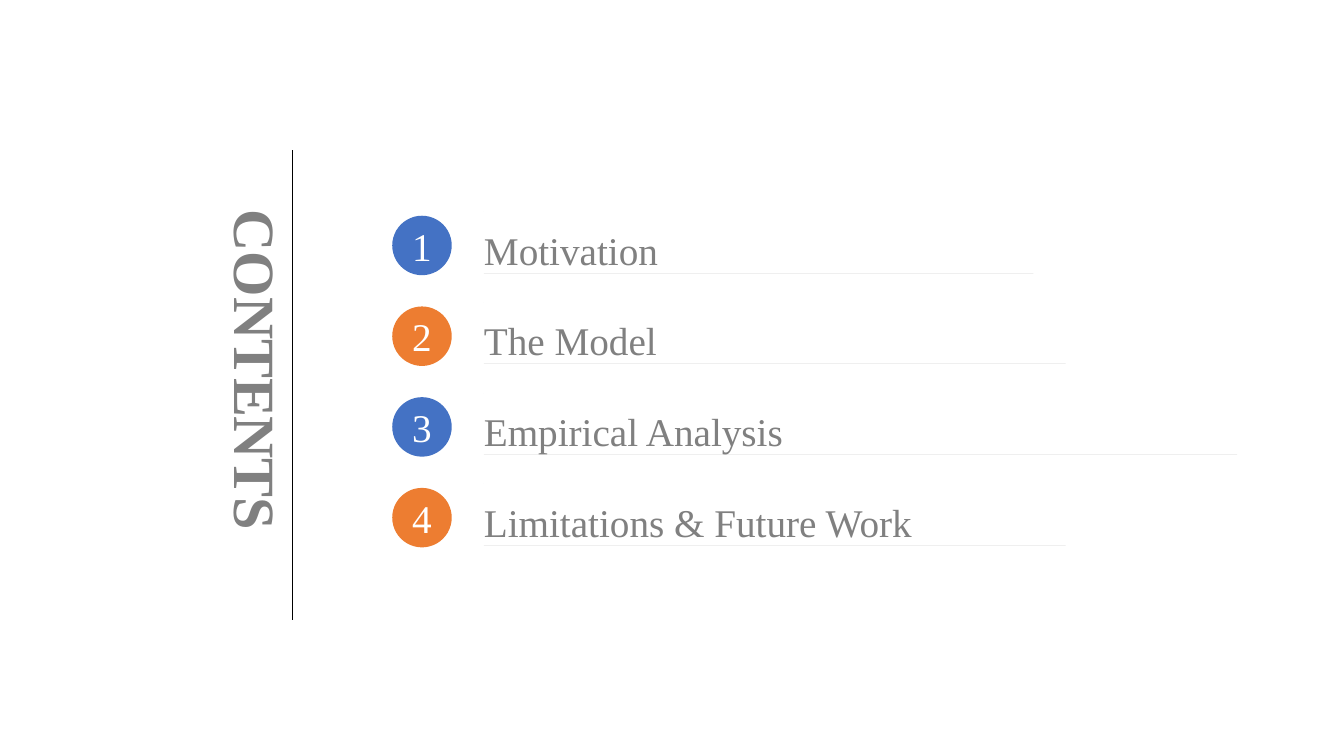
from lxml.etree import SubElement
from pptx import Presentation
from pptx.dml.color import RGBColor
from pptx.enum.shapes import MSO_CONNECTOR, MSO_SHAPE
from pptx.enum.text import MSO_ANCHOR, MSO_AUTO_SIZE, PP_ALIGN
from pptx.oxml.ns import qn
from pptx.util import Inches, Pt

GRAY, BLUE, ORANGE = "808080", "4472C4", "ED7D31"
ROW_PITCH = 0.9
# Heading and the right end of its underline
SECTIONS = [
    ("Motivation", 10.25),
    ("The Model", 10.57),
    ("Empirical Analysis", 12.27),
    ("Limitations & Future Work", 10.57),
]


def color(hex_value):
    return RGBColor.from_string(hex_value)


def write(shape, text, text_color, frame_format, paragraph_format, font_format):
    """Fill a shape with one paragraph, without insets."""
    frame = shape.text_frame
    margins = dict.fromkeys(
        ("margin_left", "margin_top", "margin_right", "margin_bottom"), 0)
    frame.text = text
    paragraph = frame.paragraphs[0]
    font = paragraph.runs[0].font
    font.color.rgb = color(text_color)
    for target, values in (
        (frame, {"word_wrap": True, **margins, **frame_format}),
        (paragraph, paragraph_format),
        (font, {"name": "Times New Roman", **font_format}),
    ):
        for name, value in values.items():
            setattr(target, name, value)


presentation = Presentation()
presentation.slide_width = Inches(13.33)
presentation.slide_height = Inches(7.5)
slide = presentation.slides.add_slide(presentation.slide_layouts[5])

title = slide.shapes.title
title.left, title.top = Inches(0.84), Inches(3.32)
title.width, title.height = Inches(3.42), Inches(0.7)
title.rotation = 90
write(title, "CONTENTS", GRAY,
      {"vertical_anchor": MSO_ANCHOR.TOP,
       "auto_size": MSO_AUTO_SIZE.SHAPE_TO_FIT_TEXT},
      {"alignment": PP_ALIGN.CENTER, "line_spacing": 1.0},
      {"size": Pt(41.7), "bold": True})

for index, (heading, line_end) in enumerate(SECTIONS):
    offset = index * ROW_PITCH
    badge_color = (BLUE, ORANGE)[index % 2]

    badge = slide.shapes.add_shape(
        MSO_SHAPE.OVAL, Inches(3.89), Inches(2.14 + offset),
        Inches(0.59), Inches(0.59))
    write(badge, str(index + 1), "FFFFFF",
          {"vertical_anchor": MSO_ANCHOR.MIDDLE},
          {"alignment": PP_ALIGN.CENTER}, {"size": Pt(28)})

    left, right = Inches(4.8), Inches(line_end)
    top, bottom = Inches(2.1 + offset), Inches(2.71 + offset)
    outline = slide.shapes.build_freeform(left, bottom)
    outline.add_line_segments([(right, bottom), (left, bottom)], close=True)
    outline.move_to(left, top)
    outline.add_line_segments([(left, top)], close=True)
    underlined_heading = outline.convert_to_shape()
    write(underlined_heading, heading, GRAY,
          {"vertical_anchor": MSO_ANCHOR.MIDDLE,
           "auto_size": MSO_AUTO_SIZE.SHAPE_TO_FIT_TEXT},
          {"alignment": PP_ALIGN.LEFT, "line_spacing": 1.3},
          {"size": Pt(28)})

    for shape, fill_color in ((badge, badge_color), (underlined_heading, GRAY)):
        shape.shadow.inherit = False
        shape.fill.solid()
        shape.fill.fore_color.rgb = color(fill_color)
        shape.line.fill.background()

divider = slide.shapes.add_connector(
    MSO_CONNECTOR.STRAIGHT, Inches(2.9), Inches(1.49), Inches(2.9), Inches(6.15))
divider.line.color.rgb = color("000000")
divider.line.width = Pt(0.5)
SubElement(divider._element.spPr, qn("a:effectLst"))

presentation.save("out.pptx")
